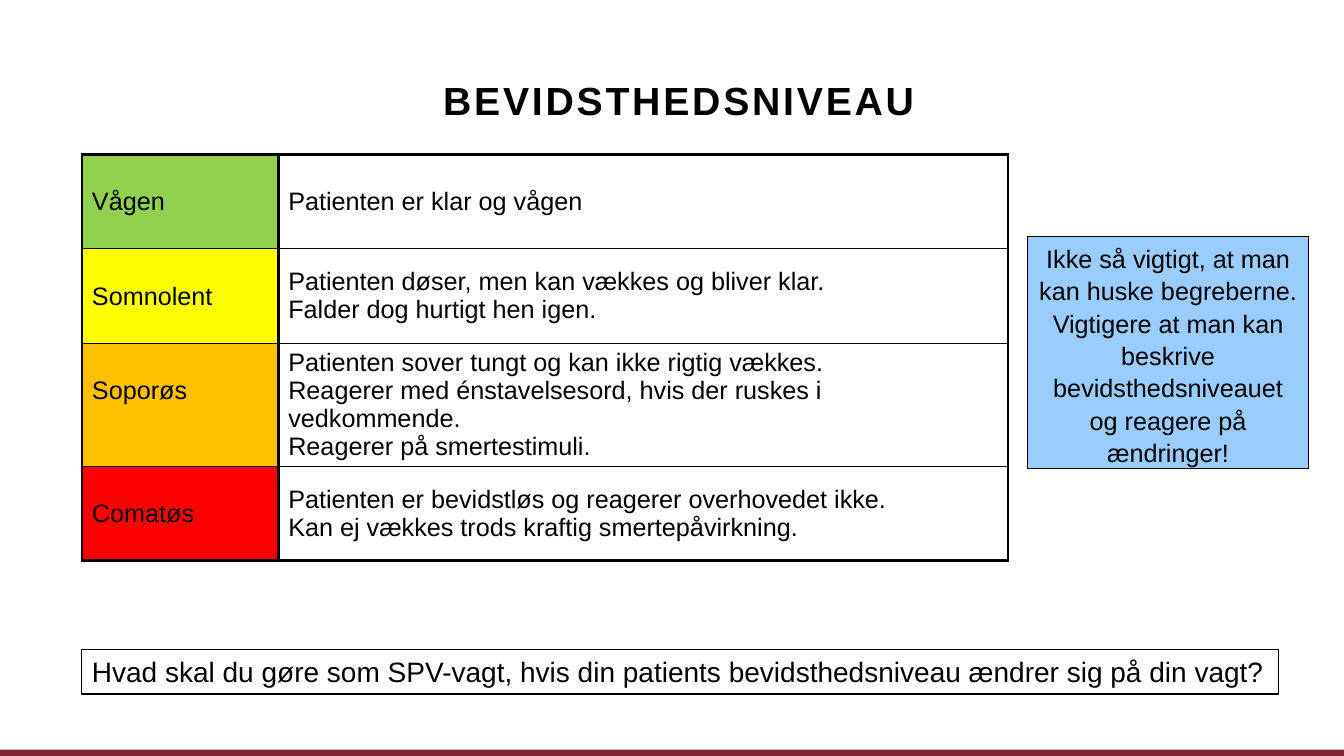
"""Build the slide on levels of consciousness."""
from dataclasses import dataclass

from lxml import etree
from pptx import Presentation
from pptx.dml.color import RGBColor
from pptx.enum.shapes import MSO_SHAPE
from pptx.enum.text import MSO_ANCHOR, PP_ALIGN
from pptx.oxml.ns import qn
from pptx.util import Emu, Pt

RECT = MSO_SHAPE.RECTANGLE
TOP, MIDDLE, BOTTOM = MSO_ANCHOR.TOP, MSO_ANCHOR.MIDDLE, MSO_ANCHOR.BOTTOM
LEFT, CENTER = PP_ALIGN.LEFT, PP_ALIGN.CENTER
SCALE = 9525


@dataclass(frozen=True)
class Theme:
    """Hold the colours, type sizes and line widths."""
    font: str = "Arial"
    ink: str = "000000"
    stripe: str = "822433"
    note: str = "99CCFF"
    head: int = 28
    body: int = 18
    ask: int = 20
    thin: float = 0.75
    rule: float = 1
    frame: float = 2.25


THEME = Theme()
LEVELS = [
    ("Vågen", "92D050", 90, ["Patienten er klar og vågen"]),
    ("Somnolent", "FFFF00", 90, [
        "Patienten døser, men kan vækkes og bliver klar.",
        "Falder dog hurtigt hen igen."]),
    ("Soporøs", "FFC000", 117, [
        "Patienten sover tungt og kan ikke rigtig vækkes.",
        "Reagerer med énstavelsesord, hvis der ruskes i vedkommende.",
        "Reagerer på smertestimuli."]),
    ("Comatøs", "FF0000", 90, [
        "Patienten er bevidstløs og reagerer overhovedet ikke.",
        "Kan ej vækkes trods kraftig smertepåvirkning."]),
]
NOTE = [
    "Ikke så vigtigt, at man kan huske begreberne.",
    "Vigtigere at man kan beskrive bevidsthedsniveauet og reagere på ændringer!",
]
ASK = ["Hvad skal du gøre som SPV-vagt, hvis din patients "
       "bevidsthedsniveau ændrer sig på din vagt?"]


def px(count):
    """Turn whole pixels into EMU."""
    return Emu(count * SCALE)


def apply(target, values):
    """Set each named attribute on the target."""
    for name, value in values.items():
        setattr(target, name, value)


def write(frame, lines, size, bold=False, **layout):
    """Fill a text frame with one paragraph per line."""
    frame.word_wrap = True
    for index, line in enumerate(lines):
        para = frame.add_paragraph() if index else frame.paragraphs[0]
        apply(para, layout)
        run = para.add_run()
        run.text = line
        apply(run.font, {"name": THEME.font, "size": Pt(size), "bold": bold})
        run.font.color.rgb = RGBColor.from_string(THEME.ink)


def paint(fill, color):
    """Give a solid fill, or none when there is no colour."""
    if color:
        fill.solid()
        fill.fore_color.rgb = RGBColor.from_string(color)
    else:
        fill.background()


def add_box(slide, area, color=None, line=None):
    """Add a rectangle with an optional fill and outline."""
    box = slide.shapes.add_shape(RECT, *map(px, area))
    box.shadow.inherit = False
    paint(box.fill, color)
    paint(box.line.fill, line)
    if line:
        box.line.width = Pt(THEME.thin)
    box.text_frame.vertical_anchor = TOP
    return box


def add_title(slide, text, area):
    """Place and format the title."""
    title = slide.shapes.title
    apply(title, dict(zip(("left", "top", "width", "height"), map(px, area))))
    frame = title.text_frame
    apply(frame, {"vertical_anchor": BOTTOM, "margin_left": 0, "margin_top": 0,
                  "margin_right": 0, "margin_bottom": 0})
    write(frame, [text], THEME.head, True, alignment=CENTER, line_spacing=0.9)
    for run in frame.paragraphs[0].runs:
        run.font._element.set("spc", "200")


def edge(cell, widths):
    """Draw the left, right, top and bottom borders of a cell."""
    props = cell._tc.get_or_add_tcPr()
    for side, width in zip("LRTB", widths):
        line = etree.SubElement(props, qn(f"a:ln{side}"), w=str(Pt(width)))
        fill = etree.SubElement(line, qn("a:solidFill"))
        etree.SubElement(fill, qn("a:srgbClr"), val=THEME.ink)


def add_levels(slide, area, widths):
    """Add the table of levels."""
    last = len(LEVELS) - 1
    table = slide.shapes.add_table(len(LEVELS), 2, *map(px, area)).table
    apply(table, {"first_row": False, "horz_banding": False})
    for column, width in zip(table.columns, widths):
        column.width = px(width)
    for index, (name, color, height, lines) in enumerate(LEVELS):
        table.rows[index].height = px(height)
        above = THEME.rule if index else THEME.frame
        below = THEME.rule if index < last else THEME.frame
        label, detail = table.rows[index].cells
        for cell, fill, text in ((label, color, [name]), (detail, None, lines)):
            edge(cell, (THEME.frame, THEME.frame, above, below))
            paint(cell.fill, fill)
            write(cell.text_frame, text, THEME.body)
        apply(label, {"vertical_anchor": TOP, "margin_top": px(32)})
        detail.vertical_anchor = MIDDLE


def main():
    """Build and save the slide."""
    deck = Presentation()
    apply(deck, {"slide_width": px(1280), "slide_height": px(720)})
    slide = deck.slides.add_slide(deck.slide_layouts[5])
    add_box(slide, (0, 714, 1280, 6), THEME.stripe)
    add_title(slide, "BEVIDSTHEDSNIVEAU", (76, 27, 1141, 91))
    add_levels(slide, (78, 147, 882, 387), (187, 695))
    note = add_box(slide, (979, 225, 267, 221), THEME.note, THEME.ink)
    write(note.text_frame, NOTE, THEME.body, alignment=CENTER, line_spacing=1.07)
    ask = add_box(slide, (78, 619, 1140, 42), line=THEME.ink)
    write(ask.text_frame, ASK, THEME.ask, alignment=LEFT)
    deck.save("out.pptx")


if __name__ == "__main__":
    main()
